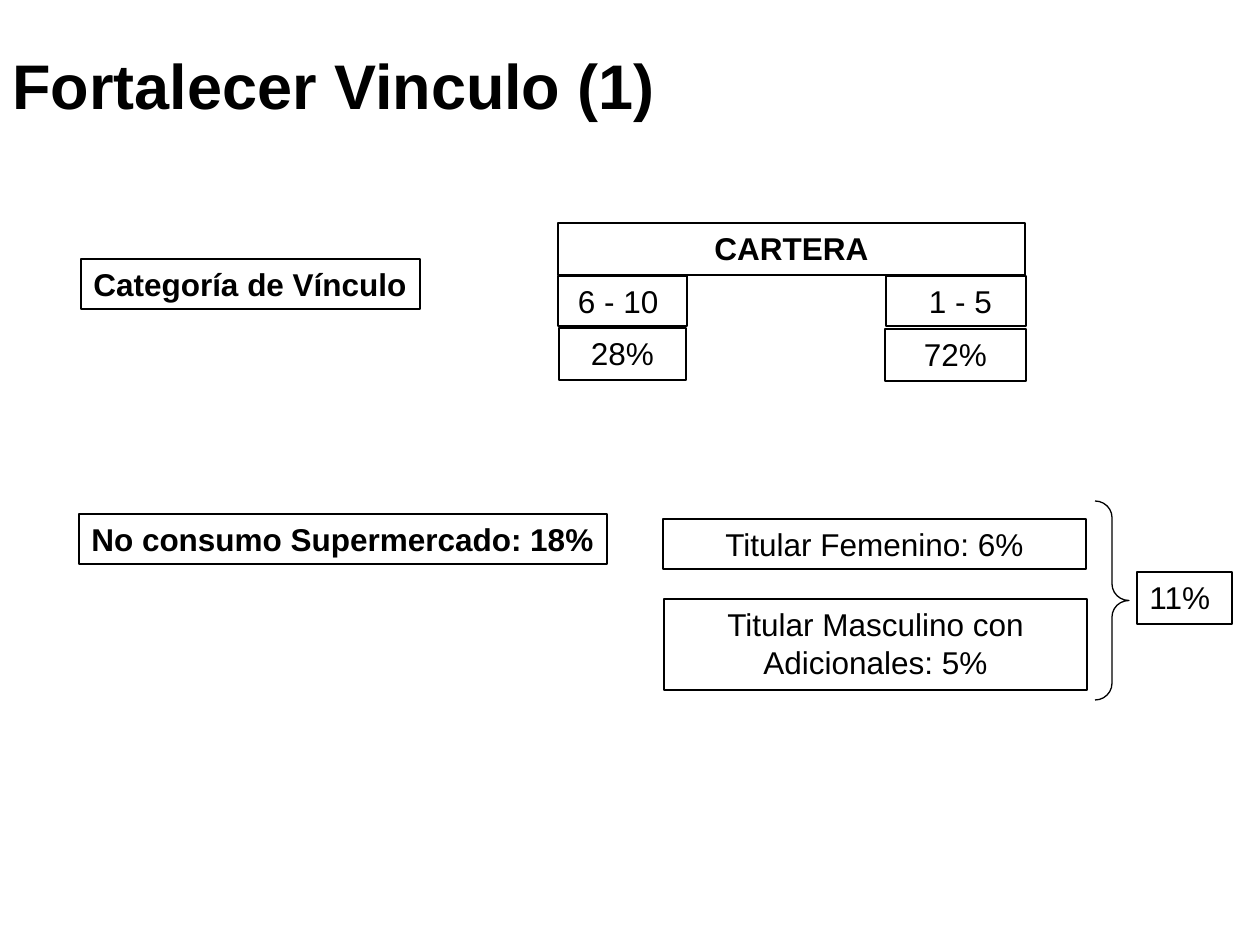
"""Build the slide on strengthening the customer bond."""
import pptx
import pptx.dml.color
import pptx.enum.shapes
import pptx.enum.text
import pptx.util

SCALE = 914400 / 126
COLORS = {"ink": "000000"}
FONT = "Arial"
ALIGN = pptx.enum.text.PP_ALIGN
SHAPE = pptx.enum.shapes.MSO_SHAPE
THIN, THICK = 0.75, 1.5

CENTERED_BOXES = [
    ("6 - 10 ", (558, 276, 129, 50), THICK, False),
    (" 1 - 5", (886, 276, 140, 50), THICK, False),
    ("28%", (559, 328, 127, 52), THIN, False),
    ("72%", (885, 329, 141, 52), THIN, False),
    ("CARTERA", (558, 223, 467, 52), THIN, True),
    ("Titular Femenino: 6%", (663, 519, 423, 50), THICK, False),
    ("Titular Masculino con Adicionales: 5%", (664, 599, 423, 91), THICK, False),
]
HEADINGS = [
    ("Categoría de Vínculo", (81, 259, 339, 50)),
    ("No consumo Supermercado: 18%", (79, 514, 528, 50)),
]


def emu(*lengths):
    return [pptx.util.Emu(round(length * SCALE)) for length in lengths]


def color(name):
    return pptx.dml.color.RGBColor.from_string(COLORS[name])


def write(box, text, size, bold, align, anchor, wrap=True):
    frame = box.text_frame
    frame.word_wrap = wrap
    frame.vertical_anchor = anchor
    para = frame.paragraphs[0]
    para.alignment = align
    span = para.add_run()
    span.text = text
    span.font.name = FONT
    span.font.size = pptx.util.Pt(size)
    span.font.bold = bold
    span.font.color.rgb = color("ink")


def add_outline(page, kind, place, width):
    shape = page.shapes.add_shape(kind, *emu(*place))
    shape.shadow.inherit = False
    shape.fill.background()
    shape.line.color.rgb = color("ink")
    shape.line.width = pptx.util.Pt(width)
    return shape


def add_box(page, text, place, width=THIN, bold=False, align=ALIGN.LEFT, wrap=True):
    box = add_outline(page, SHAPE.RECTANGLE, place, width)
    write(box, text, 18, bold, align, pptx.enum.text.MSO_ANCHOR.TOP, wrap)
    box.text_frame.auto_size = pptx.enum.text.MSO_AUTO_SIZE.SHAPE_TO_FIT_TEXT


def add_title(page, text, place):
    box = page.shapes.add_textbox(*emu(*place))
    write(box, text, 36, True, ALIGN.LEFT, pptx.enum.text.MSO_ANCHOR.MIDDLE)


def add_brace(page, place):
    brace = add_outline(page, SHAPE.RIGHT_BRACE, place, THIN)
    brace.adjustments[0] = 0.49
    brace.adjustments[1] = 0.5


def main():
    deck = pptx.Presentation()
    deck.slide_width, deck.slide_height = emu(1260, 945)
    page = deck.slides.add_slide(deck.slide_layouts[6])
    add_title(page, "Fortalecer Vinculo (1)", (0, 38, 1086, 93))
    for text, place in HEADINGS:
        add_box(page, text, place, bold=True, wrap=False)
    for text, place, width, bold in CENTERED_BOXES:
        add_box(page, text, place, width, bold, ALIGN.CENTER)
    add_box(page, "11%", (1137, 572, 95, 52))
    add_brace(page, (1095, 501, 34, 199))
    deck.save("out.pptx")


if __name__ == "__main__":
    main()
